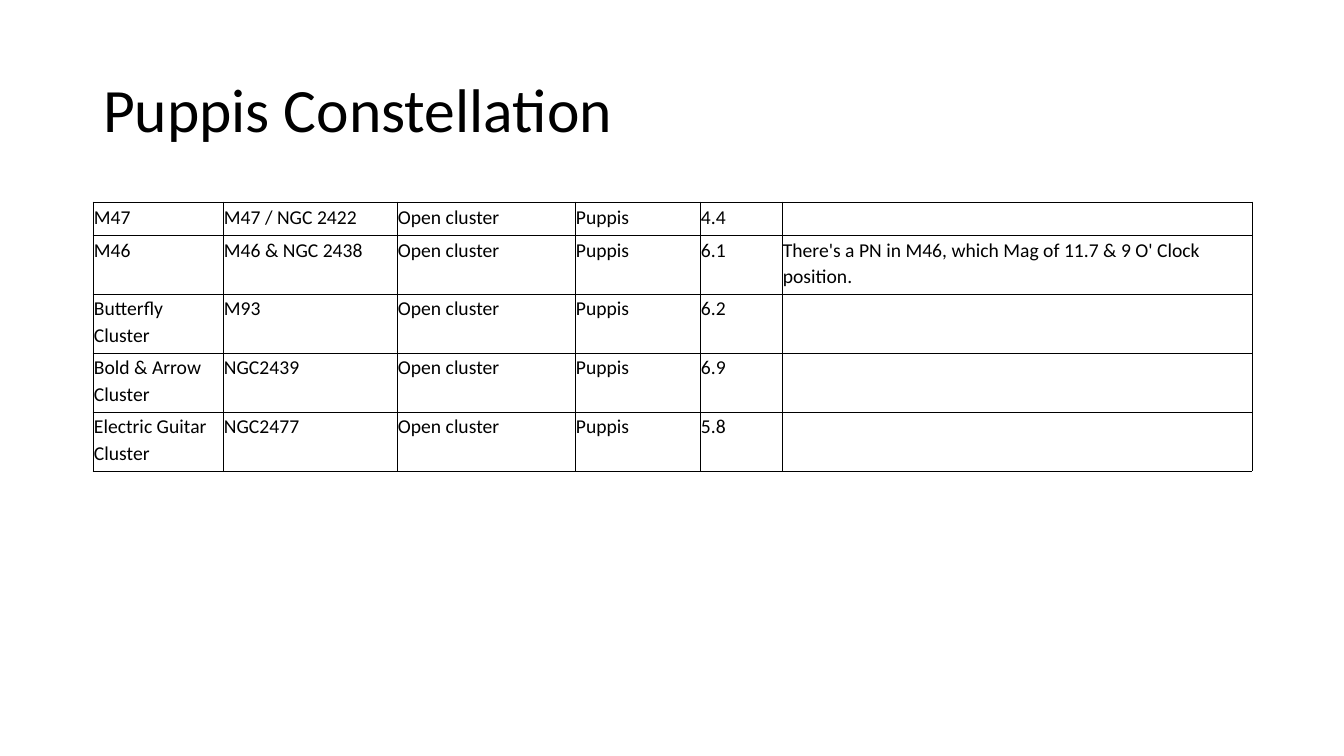
from lxml.etree import SubElement
from pptx import Presentation
from pptx.dml.color import RGBColor
from pptx.enum.text import MSO_ANCHOR, PP_ALIGN
from pptx.oxml import parse_xml
from pptx.oxml.ns import nsdecls, qn

PX = 914400 / 100.8
BLACK = RGBColor(0, 0, 0)
WHITE = RGBColor(255, 255, 255)
FONT = "Calibri"


def px(num):
    return round(num * PX)


def write(frame, text, size=14, space=1.1, color=BLACK):
    para = frame.paragraphs[0]
    para.alignment = PP_ALIGN.LEFT
    para.line_spacing = space
    if not text:
        SubElement(para._p, qn("a:endParaRPr"), sz=str(size * 100))
        return
    run = para.add_run()
    run.text = text
    run.font.name = FONT
    run.font.size = size * 12700
    run.font.color.rgb = color


deck = Presentation()
deck.slide_width = px(1344)
deck.slide_height = px(756)
slide = deck.slides.add_slide(deck.slide_layouts[5])
slide.background.fill.solid()
slide.background.fill.fore_color.rgb = WHITE

title = slide.shapes.title
title.left, title.top = px(93), px(40)
title.width, title.height = px(1159), px(146)
title.text_frame.vertical_anchor = MSO_ANCHOR.MIDDLE
title.text_frame.word_wrap = True
write(title.text_frame, "Puppis Constellation", size=44, space=0.9)

note = "There's a PN in M46, which Mag of 11.7 & 9 O' Clock position."
stars = [
    ("M47", "M47 / NGC 2422", "4.4", ""),
    ("M46", "M46 & NGC 2438", "6.1", note),
    ("Butterfly Cluster", "M93", "6.2", ""),
    ("Bold & Arrow Cluster", "NGC2439", "6.9", ""),
    ("Electric Guitar Cluster", "NGC2477", "5.8", ""),
]
widths = [130, 174, 178, 125, 82, 470]
heights = [33] + [59] * 4

frame = slide.shapes.add_table(
    len(stars), len(widths), px(93), px(202), px(sum(widths)), px(sum(heights))
)
table = frame.table
table.first_row = False
table.horz_banding = False
for col, width in zip(table.columns, widths):
    col.width = px(width)

for row, height, (name, code, mag, note) in zip(table.rows, heights, stars):
    row.height = px(height)
    texts = [name, code, "Open cluster", "Puppis", mag, note]
    for cell, text in zip(row.cells, texts):
        cell.margin_left = cell.margin_right = cell.margin_top = px(1)
        cell.margin_bottom = px(5)
        cell.vertical_anchor = MSO_ANCHOR.TOP
        props = cell._tc.get_or_add_tcPr()
        for side in "LRTB":
            props.append(parse_xml(
                f'<a:ln{side} {nsdecls("a")} w="6350"><a:solidFill>'
                f'<a:srgbClr val="{BLACK}"/></a:solidFill></a:ln{side}>'
            ))
        cell.fill.background()
        write(cell.text_frame, text)

deck.save("out.pptx")
